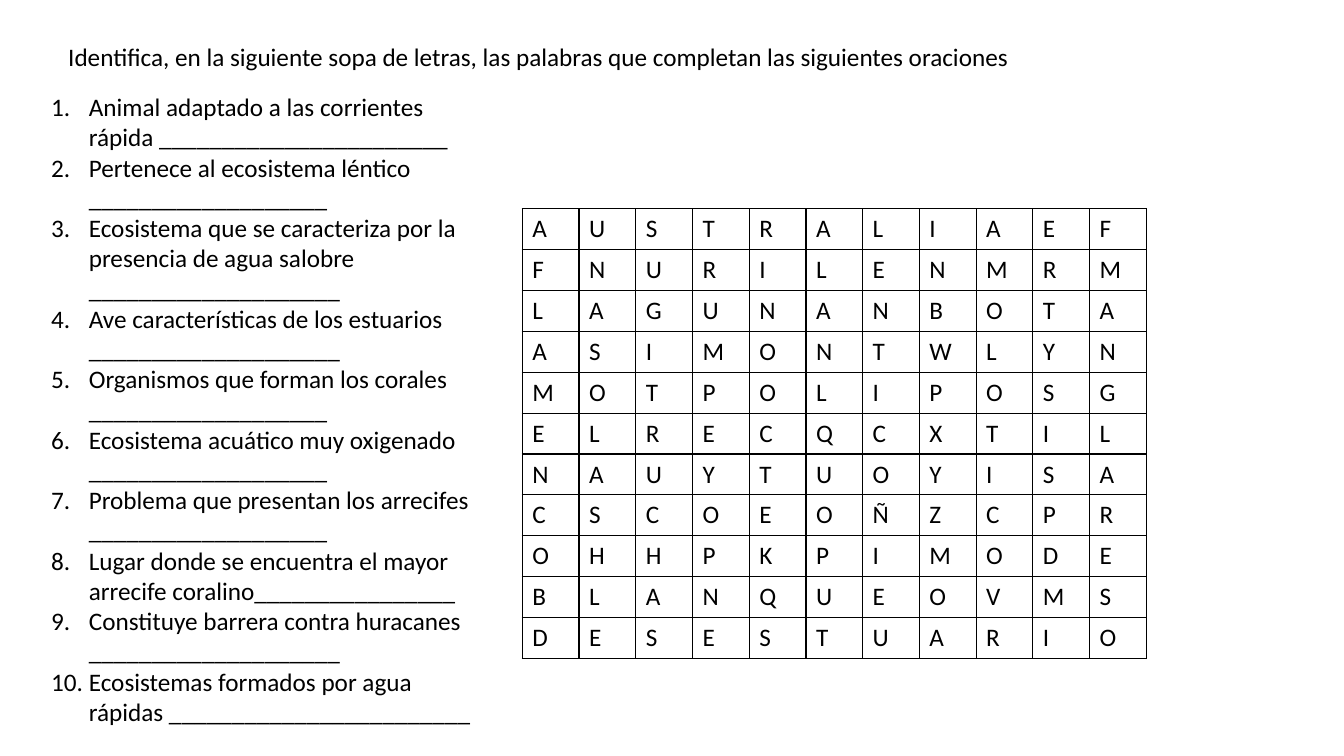
from dataclasses import dataclass

import lxml.etree
import pptx
import pptx.dml.color
import pptx.enum.text
import pptx.oxml.ns
import pptx.slide
import pptx.table
import pptx.text.text
import pptx.util
from pptx.util import Cm

COLORS = {"ink": "000000"}
FONT_NAME = "Calibri"
FONT_SIZE = pptx.util.Pt(18)
BORDER_WIDTH = pptx.util.Pt(1)
NUMBER_INDENT = Cm(0.95)
COLUMN_WIDTH = Cm(1.43)
ROW_HEIGHT = Cm(1.03)


@dataclass
class TextBlock:
    left: float
    top: float
    width: float
    height: float
    lines: list[str]
    numbered: bool = False


INSTRUCTION = TextBlock(1.47, 0.91, 30.33, 1.02, [
    "Identifica, en la siguiente sopa de letras, las palabras que completan las siguientes oraciones",
])
CLUES = TextBlock(1.04, 2.18, 11.35, 16.41, [
    "Animal adaptado a las corrientes rápida _______________________",
    "Pertenece al ecosistema léntico ___________________",
    "Ecosistema que se caracteriza por la presencia de agua salobre ____________________",
    "Ave características de los estuarios ____________________",
    "Organismos que forman los corales ___________________",
    "Ecosistema acuático muy oxigenado ___________________",
    "Problema que presentan los arrecifes ___________________",
    "Lugar donde se encuentra el mayor arrecife coralino________________",
    "Constituye barrera contra huracanes ____________________",
    "Ecosistemas formados por agua rápidas ________________________",
], numbered=True)

WORD_SEARCH = [
    "AUSTRALIAEF",
    "FNURILENMRM",
    "LAGUNANBOTA",
    "ASIMONTWLYN",
    "MOTPOLIPOSG",
    "ELRECQCXTIL",
    "NAUYTUOYISA",
    "CSCOEOÑZCPR",
    "OHHPKPIMODE",
    "BLANQUEOVMS",
    "DESESTUARIO",
]


def format_runs(paragraph: pptx.text.text._Paragraph) -> None:
    for run in paragraph.runs:
        run.font.name = FONT_NAME
        run.font.size = FONT_SIZE
        run.font.color.rgb = pptx.dml.color.RGBColor.from_string(COLORS["ink"])


def add_numbering(paragraph: pptx.text.text._Paragraph) -> None:
    properties = paragraph._p.get_or_add_pPr()
    properties.set("marL", str(NUMBER_INDENT))
    properties.set("indent", str(-NUMBER_INDENT))
    bullet_font = lxml.etree.SubElement(properties, pptx.oxml.ns.qn("a:buFont"))
    bullet_font.set("typeface", "+mj-lt")
    number = lxml.etree.SubElement(properties, pptx.oxml.ns.qn("a:buAutoNum"))
    number.set("type", "arabicPeriod")


def add_text_block(slide: pptx.slide.Slide, block: TextBlock) -> None:
    text_box = slide.shapes.add_textbox(
        Cm(block.left), Cm(block.top), Cm(block.width), Cm(block.height))
    text_frame = text_box.text_frame
    text_frame.word_wrap = True
    text_frame.auto_size = pptx.enum.text.MSO_AUTO_SIZE.SHAPE_TO_FIT_TEXT
    text_frame.text = "\n".join(block.lines)
    for paragraph in text_frame.paragraphs:
        format_runs(paragraph)
        if block.numbered:
            add_numbering(paragraph)


def add_borders(cell: pptx.table._Cell) -> None:
    properties = cell._tc.get_or_add_tcPr()
    for side in ("lnL", "lnR", "lnT", "lnB"):
        line = lxml.etree.SubElement(properties, pptx.oxml.ns.qn(f"a:{side}"))
        line.set("w", str(BORDER_WIDTH))
        fill = lxml.etree.SubElement(line, pptx.oxml.ns.qn("a:solidFill"))
        color = lxml.etree.SubElement(fill, pptx.oxml.ns.qn("a:srgbClr"))
        color.set("val", COLORS["ink"])


def add_word_search(slide: pptx.slide.Slide, letter_rows: list[str]) -> None:
    row_count, column_count = len(letter_rows), len(letter_rows[0])
    table = slide.shapes.add_table(
        row_count, column_count, Cm(13.16), Cm(5.26),
        COLUMN_WIDTH * column_count, ROW_HEIGHT * row_count).table
    table.first_row = False
    table.horz_banding = False
    for column in table.columns:
        column.width = COLUMN_WIDTH
    for row, letters in zip(table.rows, letter_rows):
        row.height = ROW_HEIGHT
        for cell, letter in zip(row.cells, letters):
            cell.text_frame.text = letter
            format_runs(cell.text_frame.paragraphs[0])
            add_borders(cell)
            cell.fill.background()


def main() -> None:
    presentation = pptx.Presentation()
    presentation.slide_width = Cm(33.87)
    presentation.slide_height = Cm(19.05)
    slide = presentation.slides.add_slide(presentation.slide_layouts[6])
    add_word_search(slide, WORD_SEARCH)
    for block in (INSTRUCTION, CLUES):
        add_text_block(slide, block)
    presentation.save("out.pptx")


if __name__ == "__main__":
    main()
